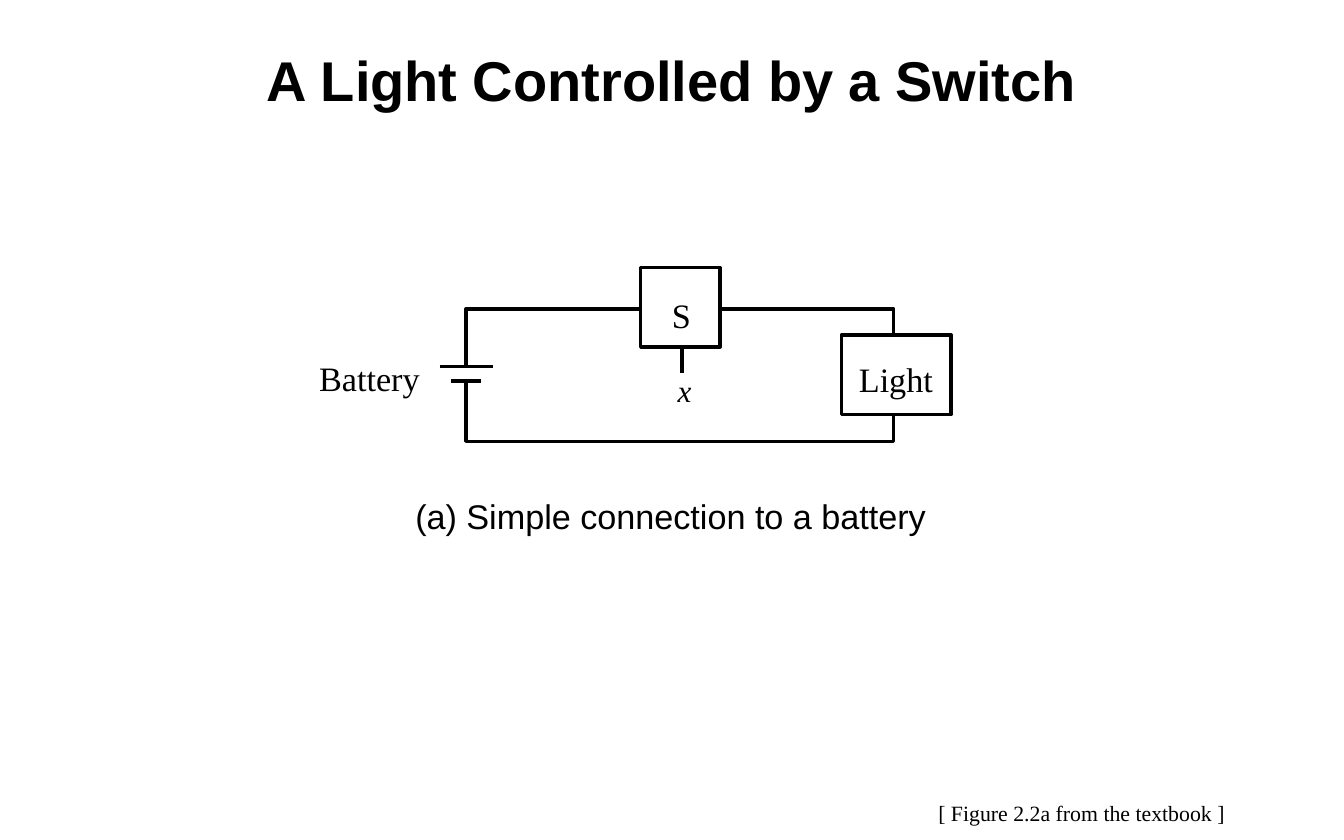
from dataclasses import dataclass

from lxml import etree
from pptx import Presentation
from pptx import util as u
from pptx.dml.color import RGBColor
from pptx.enum import shapes, text
from pptx.oxml.ns import qn


@dataclass(frozen=True)
class Theme:
    ink: RGBColor = RGBColor(0, 0, 0)
    sans: str = "Arial"
    serif: str = "Times New Roman"
    title: int = 36
    label: int = 22
    variable: int = 20
    source: int = 14
    stroke: float = 2.25


class CircuitSlide:
    def __init__(self, slide, theme):
        self.slide = slide
        self.theme = theme

    def stroke(self, shape):
        shape.line.color.rgb = self.theme.ink
        shape.line.width = u.Pt(self.theme.stroke)

    def text(self, words, left, top, width, height, align="LEFT", **font):
        shape = self.slide.shapes.add_textbox(*map(u.Cm, (left, top, width, height)))
        frame = shape.text_frame
        frame_format = {
            "word_wrap": True,
            "vertical_anchor": text.MSO_ANCHOR.MIDDLE,
            **dict.fromkeys(("margin_left", "margin_right", "margin_top", "margin_bottom"), 0),
        }
        for name, value in frame_format.items():
            setattr(frame, name, value)
        paragraph = frame.paragraphs[0]
        paragraph.alignment = text.PP_ALIGN[align]
        run = paragraph.add_run()
        run.text = words
        font_format = {"name": self.theme.serif, **font, "size": u.Pt(font["size"])}
        for name, value in font_format.items():
            setattr(run.font, name, value)
        run.font.color.rgb = self.theme.ink

    def box(self, left, top, width, height):
        shape = self.slide.shapes.add_shape(
            shapes.MSO_SHAPE.RECTANGLE, *map(u.Cm, (left, top, width, height)))
        shape.shadow.inherit = False
        shape.fill.background()
        self.stroke(shape)

    def line(self, start, end):
        connector = self.slide.shapes.add_connector(
            shapes.MSO_CONNECTOR.STRAIGHT, *map(u.Cm, (*start, *end)))
        etree.SubElement(connector._element.spPr, qn("a:effectLst"))
        self.stroke(connector)

    def wire(self, *points):
        start, *others = [(u.Cm(x), u.Cm(y)) for x, y in points]
        builder = self.slide.shapes.build_freeform(*start)
        builder.add_line_segments(others, close=False)
        shape = builder.convert_to_shape()
        shape.shadow.inherit = False
        shape.fill.background()
        self.stroke(shape)


def main():
    presentation = Presentation()
    presentation.slide_width, presentation.slide_height = u.Cm(30.48), u.Cm(19.05)
    theme = Theme()
    slide = CircuitSlide(presentation.slides.add_slide(presentation.slide_layouts[6]), theme)

    slide.text("A Light Controlled by a Switch", 2.54, 0.84, 25.4, 1.9, "CENTER",
               name=theme.sans, size=theme.title, bold=True)

    left, right, top, bottom = 10.57, 20.27, 7.01, 10.01
    switch_left, switch_top, side = 14.53, 6.07, 1.8
    switch_right, switch_bottom = switch_left + side, switch_top + side
    switch_middle = 15.47
    light_left, light_top, light_width = 19.08, 7.6, 2.49
    plate_top, plate_bottom = 8.31, 8.64

    slide.box(switch_left, switch_top, side, side)
    slide.box(light_left, light_top, light_width, side)
    slide.wire((switch_left, top), (left, top), (left, plate_top))
    slide.wire((switch_right, top), (right, top), (right, light_top))
    slide.wire((left, plate_bottom), (left, bottom), (right, bottom), (right, light_top + side))
    slide.line((switch_middle, switch_bottom), (switch_middle, 8.46))
    for y, half in ((plate_top, 0.6), (plate_bottom, 0.34)):
        slide.line((left - half, y), (left + half, y))

    for words, x, y, width in (
        ("S", 15.24, 6.68, 0.64),
        ("Battery", 7.24, 8.1, 2.5),
        ("Light", 19.48, 8.13, 1.9),
    ):
        slide.text(words, x, y, width, 0.94, size=theme.label)
    slide.text("x", 15.37, 8.37, 0.7, 0.94, size=theme.variable, italic=True)
    slide.text("(a) Simple connection to a battery", 9.42, 11.22, 11.73, 0.94,
               name=theme.sans, size=theme.label)
    slide.text("[ Figure 2.2a from the textbook ]", 21.28, 18, 7.06, 0.86, size=theme.source)

    presentation.save("out.pptx")


if __name__ == "__main__":
    main()
